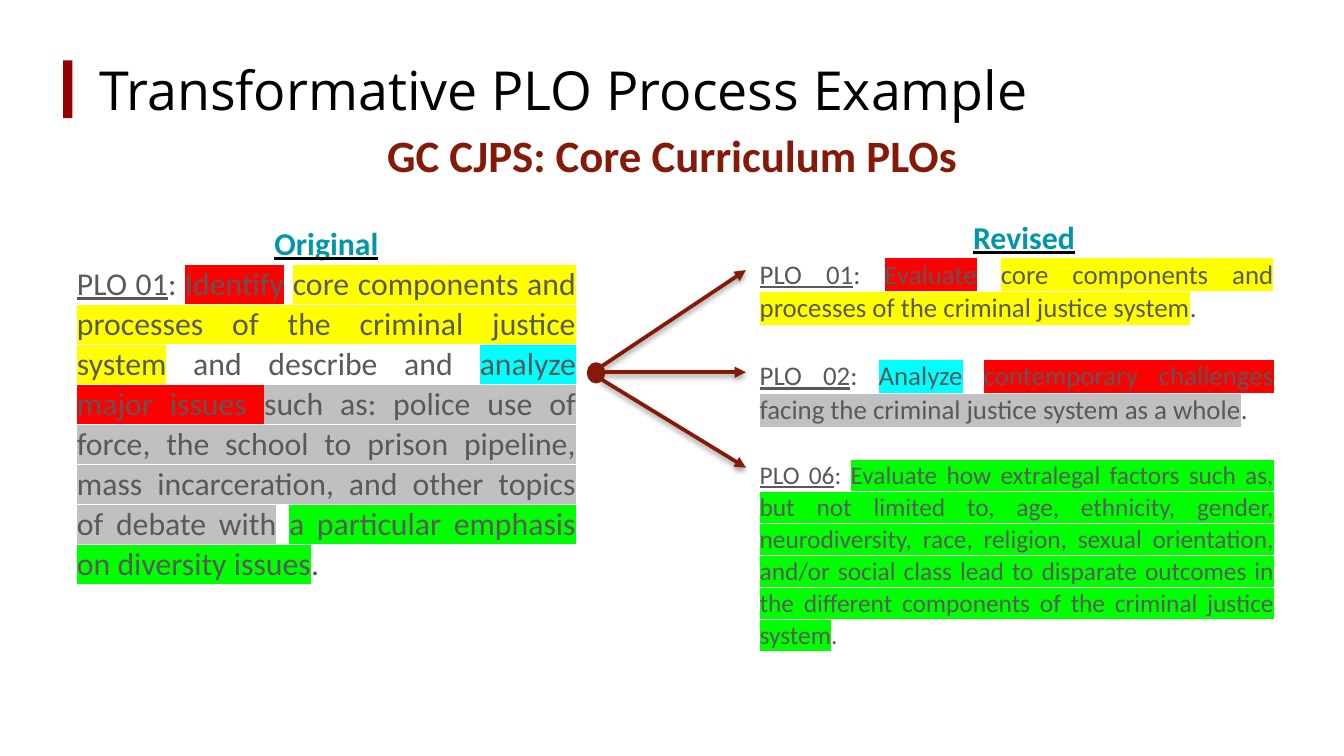
from lxml import etree
from pptx import Presentation
from pptx import util as u
from pptx.dml.color import RGBColor
from pptx.enum import shapes, text
from pptx.oxml import parse_xml
from pptx.oxml.ns import nsdecls, qn

MAROON = RGBColor(0x86, 0x1A, 0x08)
ACCENT = RGBColor(0x99, 0x00, 0x00)
TEAL = RGBColor(0x00, 0x97, 0xA7)
BODY = RGBColor(0x59, 0x59, 0x59)
BLACK = RGBColor(0x00, 0x00, 0x00)
RED = RGBColor(0xFF, 0x00, 0x00)
YELLOW = RGBColor(0xFF, 0xFF, 0x00)
CYAN = RGBColor(0x00, 0xFF, 0xFF)
GREY = RGBColor(0xC0, 0xC0, 0xC0)
GREEN = RGBColor(0x00, 0xFF, 0x00)

deck = Presentation()
deck.slide_width = u.Inches(10)
deck.slide_height = deck.slide_width * 9 // 16
page = deck.slides.add_slide(deck.slide_layouts[6])
COLUMN = deck.slide_width / 100
ROW = deck.slide_height / 56.25


def grid(left, top, width, height):
    """Turn columns and rows into slide lengths."""
    return int(left * COLUMN), int(top * ROW), int(width * COLUMN), int(height * ROW)


def add_span(para, words, size, colour, font="Calibri", bold=False, underline=None, highlight=None):
    span = para.add_run()
    span.text = words
    span.font.size, span.font.name = u.Pt(size), font
    span.font.bold, span.font.underline = bold, underline
    span.font.color.rgb = colour
    fill = span.font._element.find(qn("a:solidFill"))
    if highlight is not None:
        fill.addnext(parse_xml(
            f'<a:highlight {nsdecls("a")}><a:srgbClr val="{highlight}"/></a:highlight>'))
    if bold and underline:
        fill.addnext(parse_xml(
            f'<a:uFill {nsdecls("a")}><a:solidFill><a:srgbClr val="{BLACK}"/></a:solidFill></a:uFill>'))


# Title with its accent bar, and the subtitle
bar = page.shapes.add_shape(shapes.MSO_SHAPE.RECTANGLE, *grid(4.7, 4.5, 0.7, 4.3))
bar.fill.solid()
bar.fill.fore_color.rgb = ACCENT
bar.line.fill.background()
bar.shadow.inherit = False

title = page.shapes.add_textbox(*grid(6.4, 3.5, 93.2, 6.3)).text_frame
title.word_wrap = True
title.vertical_anchor = text.MSO_ANCHOR.MIDDLE
add_span(title.paragraphs[0], "Transformative PLO Process Example", 28.8, BLACK, "Open Sans")

subtitle = page.shapes.add_textbox(*grid(0.45, 9, 99.1, 7.4)).text_frame
subtitle.word_wrap = True
subtitle.paragraphs[0].alignment = text.PP_ALIGN.CENTER
add_span(subtitle.paragraphs[0], "GC CJPS: Core Curriculum PLOs", 24, MAROON, bold=True)

# Each outcome: name, size, space before, left indent, highlighted passages
original = [
    ("PLO 01", 17, 0, 1.1, [
        ("Identify", RED), (" ", None),
        ("core components and processes of the criminal justice system", YELLOW),
        (" and describe and ", None), ("analyze", CYAN), (" ", None), ("major issues ", RED),
        ("such as: police use of force, the school to prison pipeline, mass incarceration, "
         "and other topics of debate with", GREY),
        (" ", None), ("a particular emphasis on diversity issues", GREEN), (".", None)]),
]
revised = [
    ("PLO 01", 14.4, 0, 0, [
        ("Evaluate", RED), (" ", None),
        ("core components and processes of the criminal justice system", YELLOW), (".", None)]),
    ("PLO 02", 14.4, 18.3, 0, [
        ("Analyze", CYAN), (" ", None), ("contemporary challenges", RED), (" ", None),
        ("facing the criminal justice system as a whole", GREY), (".", None)]),
    ("PLO 06", 13.6, 17.3, 0, [
        ("Evaluate how extralegal factors such as, but not limited to, age, ethnicity, gender, "
         "neurodiversity, race, religion, sexual orientation, and/or social class lead to "
         "disparate outcomes in the different components of the criminal justice system", GREEN),
        (".", None)]),
]
for heading, place, outcomes in (("Original", (3.64, 15.5, 40.2, 31.7), original),
                                 ("Revised", (55.54, 15.04, 40.2, 38.2), revised)):
    frame = page.shapes.add_textbox(*grid(*place)).text_frame
    frame.word_wrap = True
    frame.margin_left = frame.margin_right = int(COLUMN)
    frame.margin_top = frame.margin_bottom = int(ROW)
    para = frame.paragraphs[0]
    para.alignment, para.line_spacing = text.PP_ALIGN.CENTER, 1.05
    para._p.get_or_add_pPr().set("marL", str(int(1.1 * COLUMN)))
    add_span(para, heading, 17, TEAL, bold=True, underline=True)
    for name, size, gap, indent, passages in outcomes:
        para = frame.add_paragraph()
        para.alignment, para.line_spacing = text.PP_ALIGN.JUSTIFY, 1.05
        para.space_before = u.Pt(gap)
        para._p.get_or_add_pPr().set("marL", str(int(indent * COLUMN)))
        add_span(para, name, size, BODY, underline=True)
        add_span(para, ": ", size, BODY)
        for words, highlight in passages:
            add_span(para, words, size, BODY, highlight=highlight)

# Arrows fanning out from the dot to the three revised outcomes
for start_row, end_row in ((27.3, 20.1), (28.2, 34.8), (27.7, 27.7)):
    arrow = page.shapes.add_connector(
        shapes.MSO_CONNECTOR.STRAIGHT, *grid(44.7, start_row, 55.5, end_row))
    arrow.line.color.rgb = MAROON
    arrow.line.width = u.Pt(2)
    etree.SubElement(arrow.line._get_or_add_ln(), qn("a:tailEnd"), type="triangle")
    arrow._element.spPr.append(parse_xml(
        f'<a:effectLst {nsdecls("a")}>'
        f'<a:outerShdw blurRad="{u.Pt(3.1)}" dist="{u.Pt(1.6)}" dir="5400000" rotWithShape="0">'
        f'<a:srgbClr val="{BLACK}"><a:alpha val="38000"/></a:srgbClr>'
        '</a:outerShdw></a:effectLst>'))

dot = page.shapes.add_shape(shapes.MSO_SHAPE.OVAL, *grid(43.8, 27.1, 1.1, 1.3))
dot.fill.solid()
dot.fill.fore_color.rgb = MAROON
dot.line.color.rgb = MAROON
dot.line.width = u.Pt(2)
dot.shadow.inherit = False

deck.save("out.pptx")
